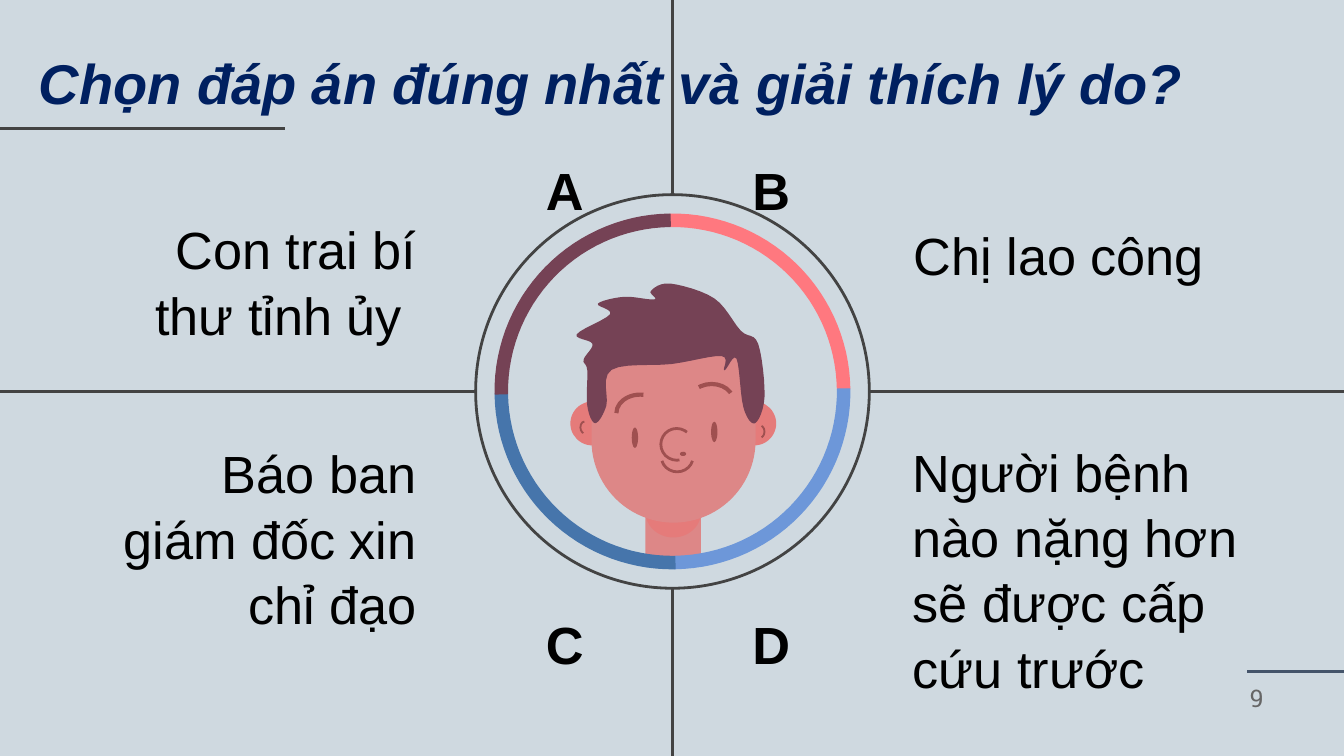
import math
from dataclasses import dataclass

import pptx
import pptx.dml.color
import pptx.enum.shapes
import pptx.enum.text
import pptx.oxml.ns
import pptx.util
from lxml import etree

Cm = pptx.util.Cm
Pt = pptx.util.Pt
RGBColor = pptx.dml.color.RGBColor
Kind = pptx.enum.shapes.MSO_SHAPE
Align = pptx.enum.text.PP_ALIGN
Anchor = pptx.enum.text.MSO_ANCHOR
Box = tuple[float, float, float, float]
Dots = list[tuple[float, float]]

BACK = RGBColor.from_string("CFD9E0")
BLACK = RGBColor.from_string("000000")
NAVY = RGBColor.from_string("002060")
DARK = RGBColor.from_string("434343")
SLATE = RGBColor.from_string("44546A")
GREY = RGBColor.from_string("666666")
SKIN = RGBColor.from_string("DD8787")
BLUSH = RGBColor.from_string("E57B7A")
PLUM = RGBColor.from_string("754255")
BROWN = RGBColor.from_string("9F5050")
CORAL = RGBColor.from_string("FF787F")
SKY = RGBColor.from_string("6D97D9")
BLUE = RGBColor.from_string("4675AB")

WIDE, HIGH = 25.4, 14.29
MID_X, MID_Y = 12.71, 7.4
RING, OUTER, INNER = 3.72, 3.35, 3.12
TURN = -0.8
STEPS = 6


@dataclass
class Form:
    kind: int
    box: Box
    color: RGBColor


@dataclass
class Stroke:
    box: Box
    start: float
    end: float
    width: float = 1.5


@dataclass
class Rule:
    start: tuple[float, float]
    end: tuple[float, float]
    color: RGBColor = DARK


@dataclass
class Answer:
    mark: str
    text: str
    box: Box


FACE = [
    Form(Kind.RECTANGLE, (12.2, 9.65, 1.05, 0.99), SKIN),
    Form(Kind.OVAL, (12.2, 9.2, 1.05, 0.96), BLUSH),
    Form(Kind.OVAL, (10.78, 7.59, 0.83, 0.83), BLUSH),
    Form(Kind.OVAL, (13.84, 7.59, 0.83, 0.83), BLUSH),
    Form(Kind.ROUNDED_RECTANGLE, (11.18, 5.84, 3.1, 4.04), SKIN),
    Form(Kind.OVAL, (11.94, 8.08, 0.12, 0.39), BROWN),
    Form(Kind.OVAL, (13.44, 7.97, 0.12, 0.39), BROWN),
    Form(Kind.OVAL, (12.85, 8.54, 0.12, 0.08), BROWN),
]

STROKES = [
    Stroke((12.49, 8.1, 0.6, 0.6), 80, 310),
    Stroke((12.5, 8.35, 0.6, 0.57), 15, 165),
    Stroke((11.65, 7.46, 0.9, 0.7), 180, 280, 2.25),
    Stroke((13.05, 7.26, 0.8, 0.6), 225, 340, 2.25),
    Stroke((14.3, 8.05, 0.15, 0.22), 280, 80, 1),
    Stroke((10.97, 7.97, 0.15, 0.22), 100, 270, 1),
]

HAIR = [
    (12.67, 5.36), (12.3, 5.5), (12.37, 5.66), (11.8, 5.61), (11.3, 5.74), (11.53, 5.94),
    (10.9, 6.32), (11.2, 6.5), (11.03, 6.8), (11.1, 7), (11.1, 7.67), (11.25, 8),
    (11.46, 7.67), (11.56, 6.99), (12.7, 6.88), (13.64, 6.73), (13.69, 7), (13.92, 6.78),
    (14.05, 7.7), (14.27, 8), (14.45, 7.5), (14.33, 6.5), (14, 6.25), (13.5, 5.64),
]

RULES = [
    Rule((23.57, 12.7), (WIDE, 12.7), SLATE),
    Rule((0, 2.43), (5.38, 2.43)),
    Rule((MID_X + RING, MID_Y), (WIDE, MID_Y)),
    Rule((0, MID_Y), (MID_X - RING, MID_Y)),
    Rule((MID_X, 0), (MID_X, MID_Y - RING)),
    Rule((MID_X, MID_Y + RING), (MID_X, HIGH)),
]

ANSWERS = [
    Answer("A", "Con trai bí thư tỉnh ủy ", (1.77, 4.17, 6.1, 2.26)),
    Answer("B", "Chị lao công", (17.27, 4.32, 6.3, 0.94)),
    Answer("C", "Báo ban giám đốc xin chỉ đạo", (2.08, 9.65, 5.79, 1)),
    Answer("D", "Người bệnh nào nặng hơn sẽ được cấp cứu trước", (17.25, 10.24, 6.48, 1)),
]


def paint(shape, fill: RGBColor | None, line: RGBColor | None = None, width: float = 0.75) -> None:
    shape.shadow.inherit = False
    if fill is None:
        shape.fill.background()
    else:
        shape.fill.solid()
        shape.fill.fore_color.rgb = fill
    if line is None:
        shape.line.fill.background()
    else:
        shape.line.color.rgb = line
        shape.line.width = Pt(width)


def draw_form(slide, form: Form) -> None:
    shape = slide.shapes.add_shape(form.kind, *map(Cm, form.box))
    if form.kind == Kind.ROUNDED_RECTANGLE:
        shape.adjustments[0] = 0.5
    paint(shape, form.color)


def draw_stroke(slide, stroke: Stroke) -> None:
    shape = slide.shapes.add_shape(Kind.ARC, *map(Cm, stroke.box))
    for index, angle in enumerate((stroke.start, stroke.end)):
        shape.adjustments[index] = angle * 0.6
    paint(shape, None, BROWN, stroke.width)


def draw_shape(slide, dots: Dots, fill: RGBColor, line: RGBColor | None = None) -> None:
    spots = [(Cm(x), Cm(y)) for x, y in dots]
    pen = slide.shapes.build_freeform(*spots[0])
    pen.add_line_segments(spots[1:], close=True)
    paint(pen.convert_to_shape(), fill, line)


def smooth(knots: Dots) -> Dots:
    dots = []
    for index in range(len(knots)):
        a, b, c, d = (knots[(index + k) % len(knots)] for k in range(4))
        for step in range(STEPS):
            t = step / STEPS
            dots.append(tuple(
                q + t / 2 * (r - p + t * (2 * p - 5 * q + 4 * r - s + t * (3 * q - p - 3 * r + s)))
                for p, q, r, s in zip(a, b, c, d)))
    return dots


def draw_arc(slide, first: float, color: RGBColor) -> None:
    turns = [math.radians(first + 3 * step) for step in range(31)]
    sides = [(OUTER, turns), (INNER, turns[::-1])]
    dots = [(MID_X + size * math.sin(a), MID_Y - size * math.cos(a)) for size, row in sides for a in row]
    draw_shape(slide, dots, color, color)


def draw_rule(slide, rule: Rule) -> None:
    line = slide.shapes.add_connector(
        pptx.enum.shapes.MSO_CONNECTOR.STRAIGHT, *map(Cm, rule.start + rule.end))
    line.line.color.rgb = rule.color
    line.line.width = Pt(1.5)
    etree.SubElement(line._element.spPr, pptx.oxml.ns.qn("a:effectLst"))


def write(shape, text: str, *, size: float = 28, font: str = "Arial", color: RGBColor = BLACK,
          bold: bool = False, slant: bool = False, align: int = Align.LEFT,
          anchor: int = Anchor.TOP, pad: float = 0.25, space: float = 1.04) -> None:
    frame = shape.text_frame
    frame.word_wrap = True
    frame.auto_size = pptx.enum.text.MSO_AUTO_SIZE.NONE
    frame.vertical_anchor = anchor
    frame.margin_left = frame.margin_right = frame.margin_top = frame.margin_bottom = Cm(pad)
    para = frame.paragraphs[0]
    para.alignment = align
    para.line_spacing = space
    run = para.add_run()
    run.text = text
    run.font.size = Pt(size)
    run.font.name = font
    run.font.bold = bold
    run.font.italic = slant
    run.font.color.rgb = color


def main() -> None:
    deck = pptx.Presentation()
    deck.slide_width, deck.slide_height = Cm(WIDE), Cm(HIGH)
    slide = deck.slides.add_slide(deck.slide_layouts[5])
    slide.background.fill.solid()
    slide.background.fill.fore_color.rgb = BACK

    for form in FACE:
        draw_form(slide, form)
    draw_shape(slide, smooth(HAIR), PLUM)
    for stroke in STROKES:
        draw_stroke(slide, stroke)
    ring = slide.shapes.add_shape(
        Kind.OVAL, Cm(MID_X - RING), Cm(MID_Y - RING), Cm(2 * RING), Cm(2 * RING))
    paint(ring, None, DARK, 1.5)
    for index, color in enumerate([CORAL, SKY, BLUE, PLUM]):
        draw_arc(slide, TURN + 90 * index, color)
    for rule in RULES:
        draw_rule(slide, rule)

    for index, item in enumerate(ANSWERS):
        row, col = divmod(index, 2)
        align = (Align.RIGHT, Align.LEFT)[col]
        spot = ((8.59, 13.97)[col], (2.7, 11.28)[row])
        mark = slide.shapes.add_textbox(*map(Cm, spot + (2.69, 1.09)))
        write(mark, item.mark, bold=True, align=align)
        body = slide.shapes.add_textbox(*map(Cm, item.box))
        write(body, item.text, align=align, anchor=Anchor.MIDDLE, pad=0)
    page = slide.shapes.add_textbox(Cm(23.37), Cm(12.62), Cm(0.89), Cm(1.09))
    write(page, "9", size=13, font="Roboto Slab", color=GREY, anchor=Anchor.BOTTOM, space=1)

    title = slide.shapes.title
    title.left, title.top, title.width, title.height = map(Cm, (0.48, 1.19, 23.77, 1.24))
    write(title, "Chọn đáp án đúng nhất và giải thích lý do?", size=30, color=NAVY,
          bold=True, slant=True, align=Align.JUSTIFY, anchor=Anchor.BOTTOM, space=1)
    deck.save("out.pptx")


if __name__ == "__main__":
    main()
